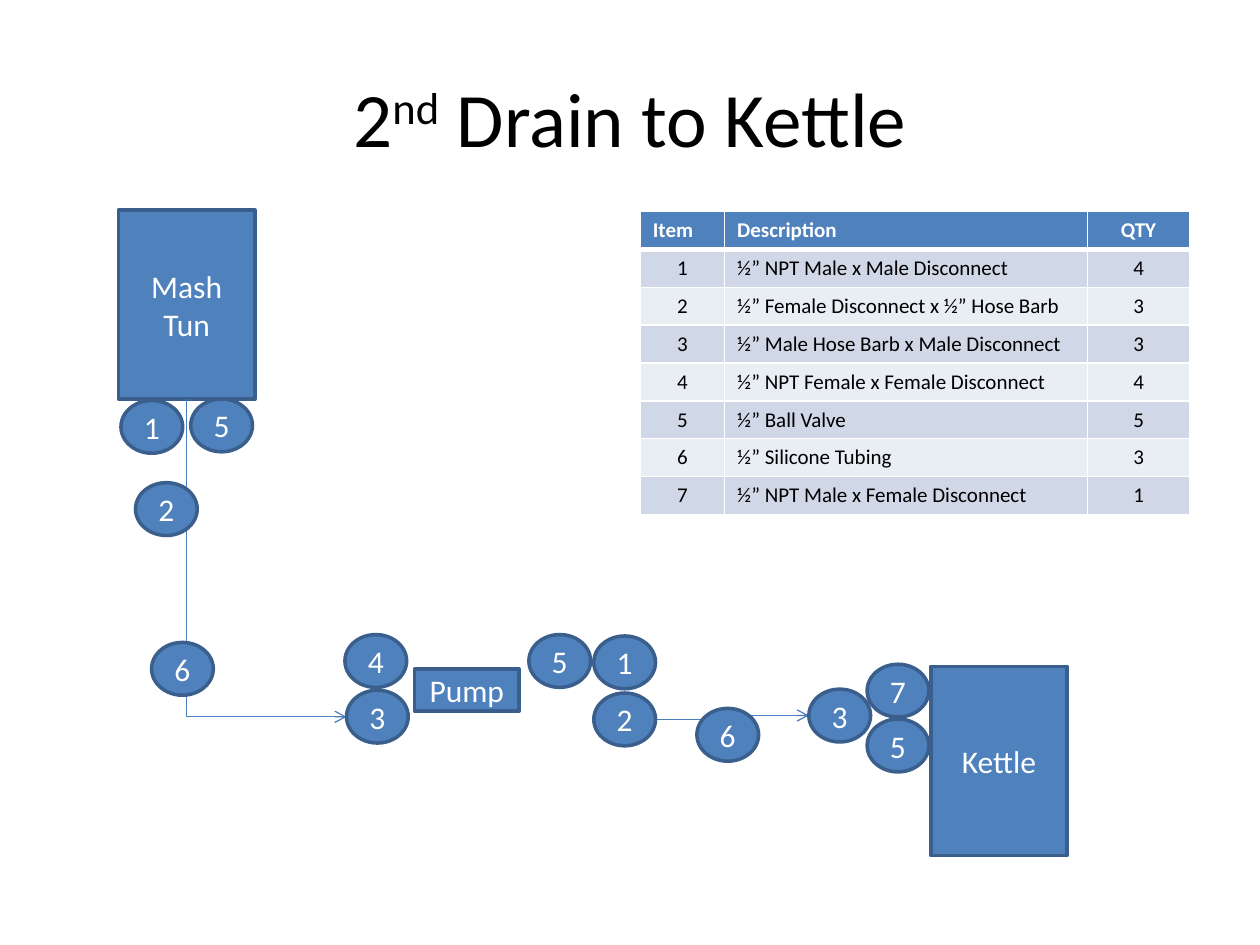
import dataclasses

import pptx
import pptx.dml.color
import pptx.enum.shapes
import pptx.enum.text
import pptx.oxml
import pptx.oxml.ns
import pptx.util

Pt = pptx.util.Pt
RGB = pptx.dml.color.RGBColor.from_string
SHAPE = pptx.enum.shapes.MSO_SHAPE
ELBOW = pptx.enum.shapes.MSO_CONNECTOR.ELBOW
ALIGN = pptx.enum.text.PP_ALIGN
MIDDLE = pptx.enum.text.MSO_ANCHOR.MIDDLE


@dataclasses.dataclass(frozen=True)
class Theme:
    font: str = "Calibri"
    fill: str = "4F81BD"
    outline: str = "3A5F8C"
    hose: str = "4B7EBC"
    light: str = "FFFFFF"
    dark: str = "000000"
    bands: tuple = ("D0D8E8", "E9EDF4")
    title_size: float = 44
    label_size: float = 18
    table_size: float = 12


THEME = Theme()
BADGE_WIDTH, BADGE_HEIGHT = 35.3, 30.2

# Left, top, width, height
VESSELS = [
    ("Mash Tun", 67.7, 120.1, 78, 108),
    ("Kettle", 531.9, 380.9, 78, 108),
    ("Pump", 236.9, 382.3, 59.8, 24),
]

# Item number, left, top
BADGES = [
    ("1", 69.1, 228.8), ("5", 109, 228), ("2", 77.4, 275.8), ("6", 86.6, 367.1),
    ("3", 462.2, 393.8), ("5", 495.5, 410.9), ("7", 495.5, 379.6),
    ("2", 339.3, 396), ("3", 198, 394.4), ("4", 197.1, 362.6),
    ("1", 339.3, 363.4), ("5", 302.2, 362.6), ("6", 398.2, 404.8),
]

COLUMN_WIDTHS = (48.2, 207.4, 58.3)
ROW_HEIGHT = 21.6
PARTS = [
    ("Item", "Description", "QTY"),
    ("1", "½” NPT Male x Male Disconnect", "4"),
    ("2", "½” Female Disconnect x ½” Hose Barb", "3"),
    ("3", "½” Male Hose Barb x Male Disconnect", "3"),
    ("4", "½” NPT Female x Female Disconnect", "4"),
    ("5", "½” Ball Valve", "5"),
    ("6", "½” Silicone Tubing", "3"),
    ("7", "½” NPT Male x Female Disconnect", "1"),
]


def apply_format(target, values):
    for name, value in values.items():
        setattr(target, name, value)


def paint(fill, color):
    fill.solid()
    fill.fore_color.rgb = RGB(color)


def add_span(para, text, size, color, bold=False):
    span = para.add_run()
    span.text = text
    apply_format(span.font, {"name": THEME.font, "size": Pt(size), "bold": bold})
    span.font.color.rgb = RGB(color)
    return span


def add_title(page):
    box = page.shapes.add_textbox(Pt(36), Pt(21.6), Pt(648), Pt(90))
    apply_format(box.text_frame, {"word_wrap": True, "vertical_anchor": MIDDLE})
    para = box.text_frame.paragraphs[0]
    para.alignment = ALIGN.CENTER
    for text, baseline in (("2", 0), ("nd", 30000), (" Drain to Kettle", 0)):
        span = add_span(para, text, THEME.title_size, THEME.dark)
        if baseline:
            span.font._element.set("baseline", str(baseline))


def add_label_shape(page, kind, text, left, top, width, height):
    box = page.shapes.add_shape(kind, Pt(left), Pt(top), Pt(width), Pt(height))
    box.shadow.inherit = False
    paint(box.fill, THEME.fill)
    box.line.color.rgb = RGB(THEME.outline)
    box.line.width = Pt(2)
    apply_format(box.text_frame, {"word_wrap": True, "vertical_anchor": MIDDLE})
    para = box.text_frame.paragraphs[0]
    para.alignment = ALIGN.CENTER
    add_span(para, text, THEME.label_size, THEME.light)


def add_hose(page, start, end):
    hose = page.shapes.add_connector(ELBOW, *(Pt(value) for value in start + end))
    hose.line.color.rgb = RGB(THEME.hose)
    hose.line.width = Pt(0.75)
    properties = hose.element.spPr
    outline = properties.find(pptx.oxml.ns.qn("a:ln"))
    namespace = pptx.oxml.ns.nsdecls("a")
    outline.append(pptx.oxml.parse_xml(f'<a:tailEnd {namespace} type="arrow"/>'))
    properties.append(pptx.oxml.parse_xml(f"<a:effectLst {namespace}/>"))
    return hose


def add_corner_hose(page, start, end):
    """Run down first, then right: a one-bend connector turned by 270 degrees."""
    hose = add_hose(page, start, end)
    across, down = end[0] - start[0], end[1] - start[1]
    apply_format(hose, {
        "left": Pt((start[0] + end[0] - down) / 2),
        "top": Pt((start[1] + end[1] - across) / 2),
        "width": Pt(down),
        "height": Pt(across),
    })
    properties = hose.element.spPr
    frame = properties.find(pptx.oxml.ns.qn("a:xfrm"))
    frame.set("rot", str(270 * 60000))
    frame.set("flipH", "1")
    properties.find(pptx.oxml.ns.qn("a:prstGeom")).set("prst", "bentConnector2")


def add_cell_borders(cell, widths):
    for side, width in widths.items():
        cell._tc.get_or_add_tcPr().append(pptx.oxml.parse_xml(
            f'<a:ln{side} {pptx.oxml.ns.nsdecls("a")} w="{Pt(width)}"><a:solidFill>'
            f'<a:srgbClr val="{THEME.light}"/></a:solidFill></a:ln{side}>'))


def add_parts_table(page):
    table = page.shapes.add_table(
        len(PARTS), len(COLUMN_WIDTHS), Pt(365.9), Pt(120.9),
        Pt(sum(COLUMN_WIDTHS)), Pt(ROW_HEIGHT * len(PARTS))).table
    for column, width in zip(table.columns, COLUMN_WIDTHS):
        column.width = Pt(width)
    for row_index, values in enumerate(PARTS):
        header = row_index == 0
        table.rows[row_index].height = Pt(ROW_HEIGHT)
        for column_index, text in enumerate(values):
            cell = table.cell(row_index, column_index)
            top = 3 if row_index == 1 else 1
            add_cell_borders(cell, {"L": 1, "R": 1, "T": top, "B": 3 if header else 1})
            paint(cell.fill, THEME.fill if header else THEME.bands[(row_index - 1) % 2])
            para = cell.text_frame.paragraphs[0]
            centred = column_index == 2 or (column_index == 0 and not header)
            para.alignment = ALIGN.CENTER if centred else ALIGN.LEFT
            add_span(para, text, THEME.table_size,
                     THEME.light if header else THEME.dark, header)


def main():
    deck = pptx.Presentation()
    apply_format(deck, {"slide_width": Pt(720), "slide_height": Pt(540)})
    page = deck.slides.add_slide(deck.slide_layouts[6])

    # Heading and parts list
    add_title(page)
    add_parts_table(page)

    # Vessels and the hoses between them
    for vessel in VESSELS:
        add_label_shape(page, SHAPE.RECTANGLE, *vessel)
    add_corner_hose(page, (106.7, 228.1), (198, 409.6))
    add_hose(page, (374.6, 411.1), (462.2, 408.9))

    # Numbered fittings
    for badge in BADGES:
        add_label_shape(page, SHAPE.OVAL, *badge, BADGE_WIDTH, BADGE_HEIGHT)

    deck.save("out.pptx")


if __name__ == "__main__":
    main()
